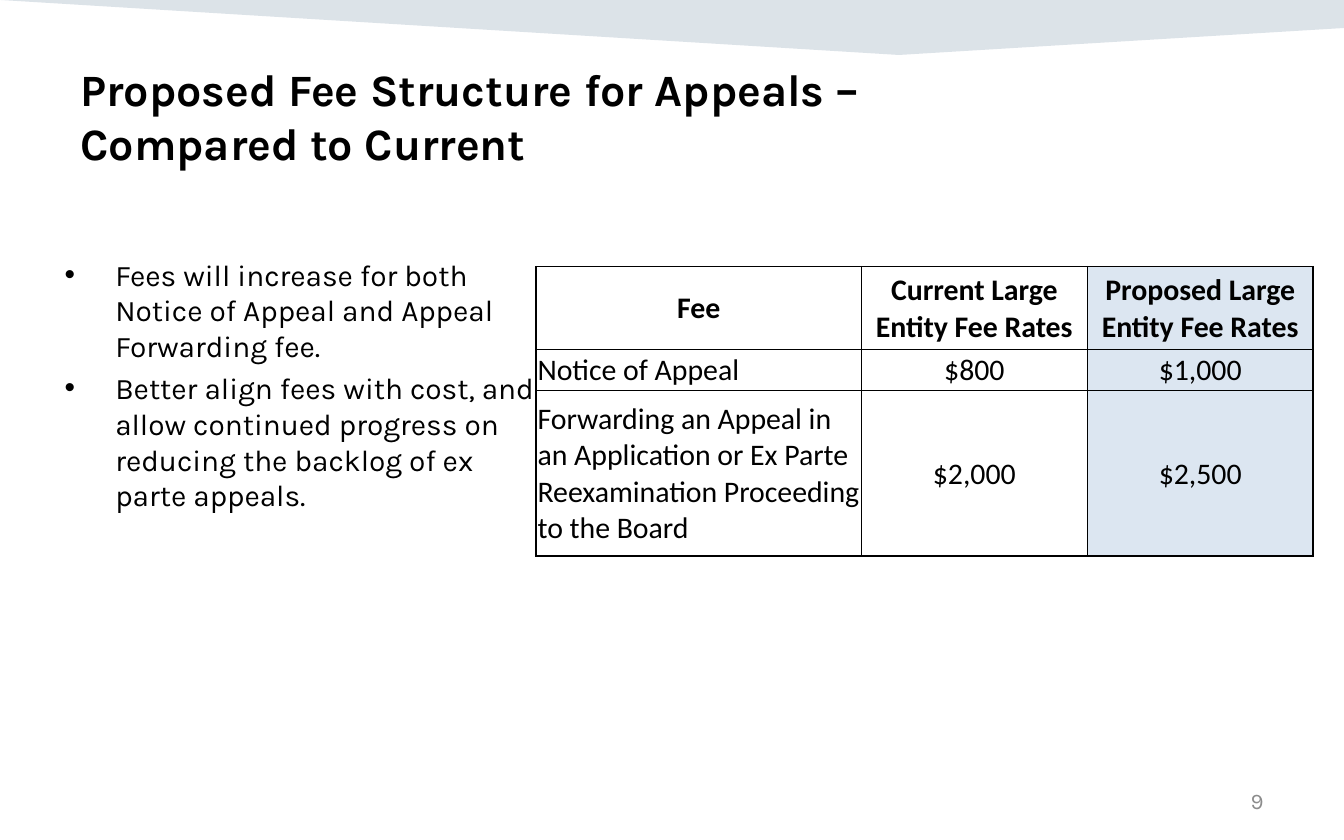
from lxml import etree
from pptx import Presentation
from pptx.dml.color import RGBColor
from pptx.enum.text import MSO_ANCHOR, PP_ALIGN
from pptx.oxml.ns import qn
from pptx.util import Cm, Pt

MIDDLE = MSO_ANCHOR.MIDDLE
LEFT, CENTER, RIGHT = PP_ALIGN.LEFT, PP_ALIGN.CENTER, PP_ALIGN.RIGHT
COLORS = {"text": "000000", "number": "8C8C8C", "band": "164469",
          "current": "FFFFFF", "proposed": "DCE6F1"}


def add_run(paragraph, text, size, font="Karla", color="text", bold=False):
    run = paragraph.add_run()
    run.text = text
    run.font.name = font
    run.font.size = Pt(size)
    run.font.bold = bold
    run.font.color.rgb = RGBColor.from_string(COLORS[color])


def add_text_frame(slide, left, top, width, height):
    text_box = slide.shapes.add_textbox(Cm(left), Cm(top), Cm(width), Cm(height))
    text_box.text_frame.word_wrap = True
    return text_box.text_frame


presentation = Presentation()
presentation.slide_width = Cm(25.4)
presentation.slide_height = Cm(15.88)
slide = presentation.slides.add_slide(presentation.slide_layouts[6])

# Translucent band along the top edge
builder = slide.shapes.build_freeform(0, 0)
builder.add_line_segments(
    [(Cm(25.4), 0), (Cm(25.4), Cm(0.53)), (Cm(16.99), Cm(1.04))], close=True)
band = builder.convert_to_shape()
band.shadow.inherit = False
band.line.fill.background()
band.fill.solid()
band.fill.fore_color.rgb = RGBColor.from_string(COLORS["band"])
band_color = band.fill._xPr.find(".//" + qn("a:srgbClr"))
etree.SubElement(band_color, qn("a:alpha"), val="15000")

# Title
paragraph = add_text_frame(slide, 1.27, 1.04, 22.86, 1.3).paragraphs[0]
add_run(paragraph, "Proposed Fee Structure for Appeals –", 24, bold=True)
paragraph.add_line_break()
add_run(paragraph, "Compared to Current", 24, bold=True)

# Slide number
text_frame = add_text_frame(slide, 18.21, 14.71, 5.92, 0.84)
text_frame.vertical_anchor = MIDDLE
paragraph = text_frame.paragraphs[0]
paragraph.alignment = RIGHT
add_run(paragraph, "9", 12, color="number")

# Bullets
bullets = [
    "Fees will increase for both Notice of Appeal and Appeal Forwarding fee.",
    "Better align fees with cost, and allow continued progress on reducing "
    "the backlog of ex parte appeals.",
]
text_frame = add_text_frame(slide, 0.97, 4.72, 9.5, 6.12)
for index, bullet in enumerate(bullets):
    paragraph = text_frame.add_paragraph() if index else text_frame.paragraphs[0]
    properties = paragraph._p.get_or_add_pPr()
    properties.set("marL", str(Cm(0.96)))
    properties.set("indent", str(-Cm(0.96)))
    etree.SubElement(properties, qn("a:buFont"), typeface="Arial")
    etree.SubElement(properties, qn("a:buChar"), char="•")
    if index:
        paragraph.space_before = Pt(3.2)
    add_run(paragraph, bullet, 16)

# Fee table
rows = [
    ["Fee", "Current Large Entity Fee Rates", "Proposed Large Entity Fee Rates"],
    ["Notice of Appeal", "$800", "$1,000"],
    ["Forwarding an Appeal in an Application or Ex Parte Reexamination "
     "Proceeding to the Board", "$2,000", "$2,500"],
]
column_widths = [6.15, 4.27, 4.27]
row_heights = [1.56, 0.78, 3.13]
last_row, last_column = len(rows) - 1, len(column_widths) - 1

table = slide.shapes.add_table(
    len(rows), len(column_widths), Cm(10.13), Cm(5.04),
    Cm(sum(column_widths)), Cm(sum(row_heights))).table
for column, width in zip(table.columns, column_widths):
    column.width = Cm(width)
for row, height in zip(table.rows, row_heights):
    row.height = Cm(height)

for row_index, row in enumerate(rows):
    for column_index, text in enumerate(row):
        cell = table.cell(row_index, column_index)
        cell.vertical_anchor = MIDDLE
        cell.margin_left = cell.margin_right = cell.margin_top = Cm(0.03)
        cell.margin_bottom = 0
        header = row_index == 0
        paragraph = cell.text_frame.paragraphs[0]
        paragraph.alignment = CENTER if header or column_index else LEFT
        add_run(paragraph, text, 16, font="Calibri", bold=header)

        # Outer edges are twice as thick as inner ones
        outer_edges = {"a:lnL": column_index == 0,
                       "a:lnR": column_index == last_column,
                       "a:lnT": row_index == 0,
                       "a:lnB": row_index == last_row}
        properties = cell._tc.get_or_add_tcPr()
        for tag, outer in outer_edges.items():
            border = etree.SubElement(properties, qn(tag), w=str(Pt(1 if outer else 0.5)))
            border_fill = etree.SubElement(border, qn("a:solidFill"))
            etree.SubElement(border_fill, qn("a:srgbClr"), val=COLORS["text"])

        # Proposed rates are tinted, current rates are white
        if column_index == last_column:
            fill_name = "proposed"
        elif column_index and not header:
            fill_name = "current"
        else:
            cell.fill.background()
            continue
        cell.fill.solid()
        cell.fill.fore_color.rgb = RGBColor.from_string(COLORS[fill_name])

presentation.save("out.pptx")
